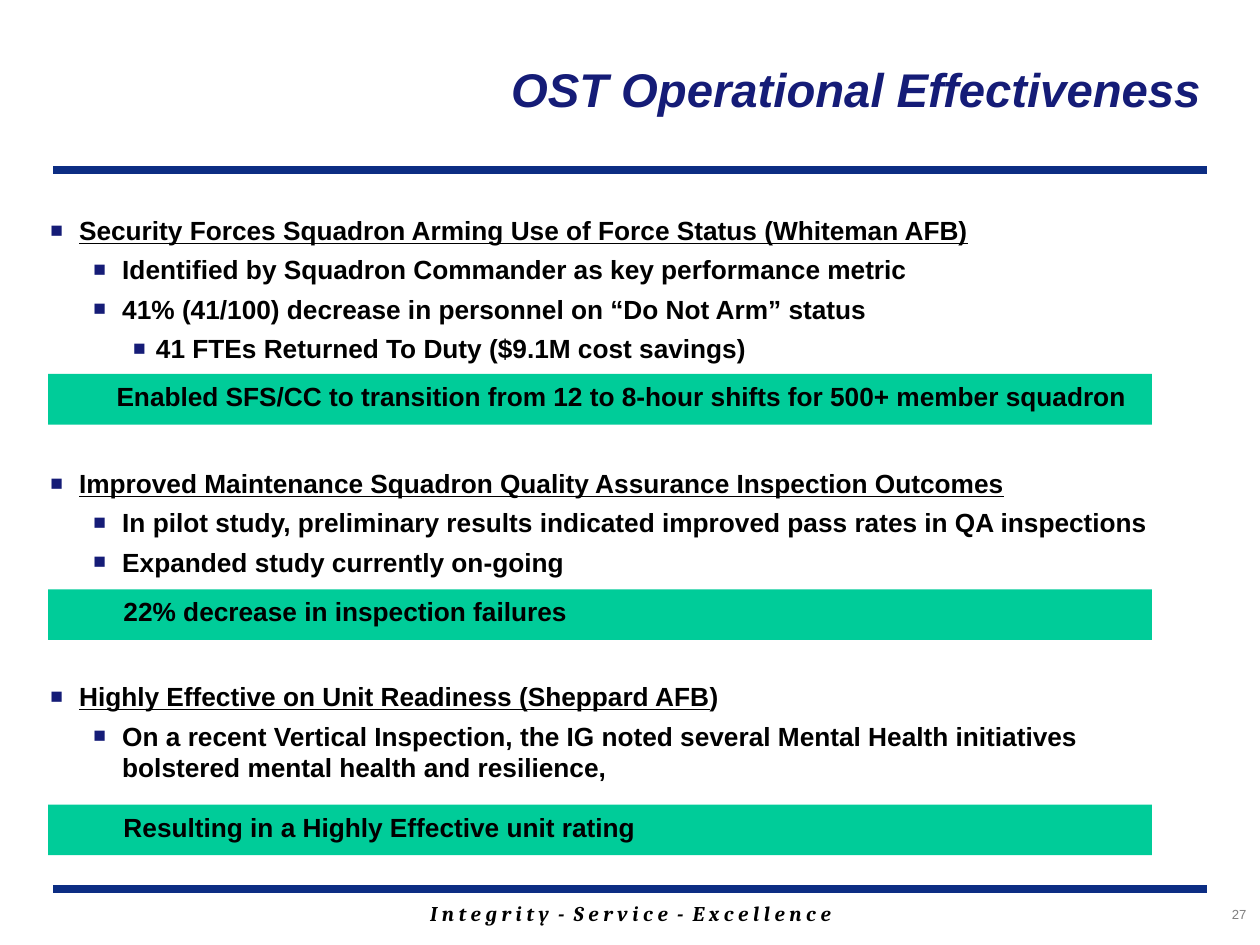
"""Build the OST Operational Effectiveness slide."""
from dataclasses import dataclass

from lxml.etree import SubElement as Sub
from pptx import Presentation
from pptx.dml.color import RGBColor as Rgb
from pptx.enum.shapes import MSO_CONNECTOR as Conn, MSO_SHAPE as Shape
from pptx.enum.text import MSO_ANCHOR as Anchor, MSO_AUTO_SIZE as Fit, PP_ALIGN as Align
from pptx.oxml.ns import qn
from pptx.util import Cm, Pt


@dataclass(frozen=True)
class Theme:
    """Colours, fonts and type sizes of the slide."""
    navy: str = "151C77"
    rule: str = "0C2D83"
    green: str = "00CC99"
    black: str = "000000"
    gray: str = "7F7F7F"
    sans: str = "Arial"
    serif: str = "Cambria"
    head: float = 27
    body: float = 15
    foot: float = 12
    num: float = 7.5


T = Theme()
LEVELS = ((0.58, -0.58), (1.45, -0.58), (2.13, -0.46))
NEAR, FAR = 4.5, 59

POINTS = (
    (0, 0, (("Security Forces Squadron Arming Use of Force Status (Whiteman AFB)", True),)),
    (1, NEAR, (("Identified by Squadron Commander as key performance metric", False),)),
    (1, NEAR, (("41% (41/100) decrease in personnel on “Do Not Arm” status", False),)),
    (2, NEAR, (("41 FTEs Returned To Duty ($9.1M cost savings)", False),)),
    (0, FAR, (("Improved Maintenance Squadron Quality Assurance Inspection Outcomes", True),)),
    (1, NEAR, (("In pilot study, preliminary results indicated improved pass rates in QA inspections", False),)),
    (1, NEAR, (("Expanded study currently on-going", False),)),
    (0, FAR, (("Highly Effective on Unit Readiness (Sheppard AFB", True), (")", False))),
    (1, NEAR, (("On a recent Vertical Inspection, the IG noted several Mental Health initiatives "
                "bolstered mental health and resilience,", False),)),
)

BARS = (
    ("Enabled SFS/CC to transition from 12 to 8-hour shifts for 500+ member squadron", Align.CENTER, 1.12),
    ("22% decrease in inspection failures", Align.LEFT, 1.52),
    ("Resulting in a Highly Effective unit rating", Align.LEFT, 1.52),
)


def place(shape, left, top, width, height):
    """Move and size a shape in centimetres."""
    shape.left, shape.top = Cm(left), Cm(top)
    shape.width, shape.height = Cm(width), Cm(height)


def add_run(para, text, size, color=T.black, face=T.sans, bold=True, slant=False, under=False):
    """Append one formatted run to a paragraph."""
    run = para.add_run()
    run.text = text
    font = run.font
    font.name, font.size = face, Pt(size)
    font.bold, font.italic, font.underline = bold, slant, under
    font.color.rgb = Rgb.from_string(color)


def add_mark(para, level):
    """Give a paragraph its square bullet and hanging indent."""
    left, hang = LEVELS[level]
    props = para._p.get_or_add_pPr()
    props.set("marL", str(Cm(left)))
    props.set("indent", str(Cm(hang)))
    Sub(Sub(props, qn("a:buClr")), qn("a:srgbClr"), val=T.navy)
    Sub(props, qn("a:buSzPct"), val="80000")
    Sub(props, qn("a:buFont"), typeface=T.sans)
    Sub(props, qn("a:buChar"), char="■")


def add_rule(slide, top):
    """Draw a heavy line across the slide."""
    line = slide.shapes.add_connector(Conn.STRAIGHT, Cm(1.07), Cm(top), Cm(24.33), Cm(top))
    line.line.color.rgb = Rgb.from_string(T.rule)
    line.line.width = Pt(4.5)
    Sub(line._element.spPr, qn("a:effectLst"))


def add_note(slide, spot, text, align, **style):
    """Add a one-line text box."""
    frame = slide.shapes.add_textbox(*map(Cm, spot)).text_frame
    frame.word_wrap = True
    para = frame.paragraphs[0]
    para.alignment = align
    add_run(para, text, **style)


def fill_title(title):
    """Set the slide title."""
    place(title, 4.62, 0.2, 19.84, 3.18)
    frame = title.text_frame
    frame.auto_size = Fit.NONE
    frame.vertical_anchor = Anchor.MIDDLE
    para = frame.paragraphs[0]
    para.alignment = Align.RIGHT
    add_run(para, "OST Operational Effectiveness", T.head, T.navy, slant=True)


def fill_body(body):
    """Write the bulleted list."""
    place(body, 0.76, 4.19, 23.32, 13.18)
    frame = body.text_frame
    frame.auto_size = Fit.NONE
    frame.vertical_anchor = Anchor.TOP
    for i, (level, gap, runs) in enumerate(POINTS):
        para = frame.add_paragraph() if i else frame.paragraphs[0]
        para.level = level
        add_mark(para, level)
        para.space_before = Pt(gap)
        for text, under in runs:
            add_run(para, text, T.body, under=under)


def add_bar(slide, top, text, align, inset):
    """Add a green result bar."""
    bar = slide.shapes.add_shape(Shape.RECTANGLE, Cm(0.97), Cm(top), Cm(22.25), Cm(1.02))
    bar.shadow.inherit = False
    bar.fill.solid()
    bar.fill.fore_color.rgb = Rgb.from_string(T.green)
    bar.line.fill.background()
    frame = bar.text_frame
    frame.word_wrap = True
    frame.vertical_anchor = Anchor.TOP
    frame.margin_left = Cm(inset)
    para = frame.paragraphs[0]
    para.alignment = align
    add_run(para, text, T.body)


def main():
    """Build and save the slide."""
    deck = Presentation()
    deck.slide_width, deck.slide_height = Cm(25.4), Cm(19.05)
    slide = deck.slides.add_slide(deck.slide_layouts[1])
    for top in (3.43, 17.93):
        add_rule(slide, top)
    add_note(slide, (1.07, 18.03, 23.29, 0.76),
             "I n t e g r i t y  -  S e r v i c e  -  E x c e l l e n c e",
             Align.CENTER, size=T.foot, face=T.serif, slant=True)
    fill_title(slide.shapes.title)
    fill_body(slide.placeholders[1])
    add_note(slide, (22.2, 18.14, 3.18, 0.84), "27", Align.RIGHT,
             size=T.num, color=T.gray, bold=False)
    for i, bar in enumerate(BARS):
        add_bar(slide, 7.54 + 4.34 * i, *bar)
    deck.save("out.pptx")


if __name__ == "__main__":
    main()
